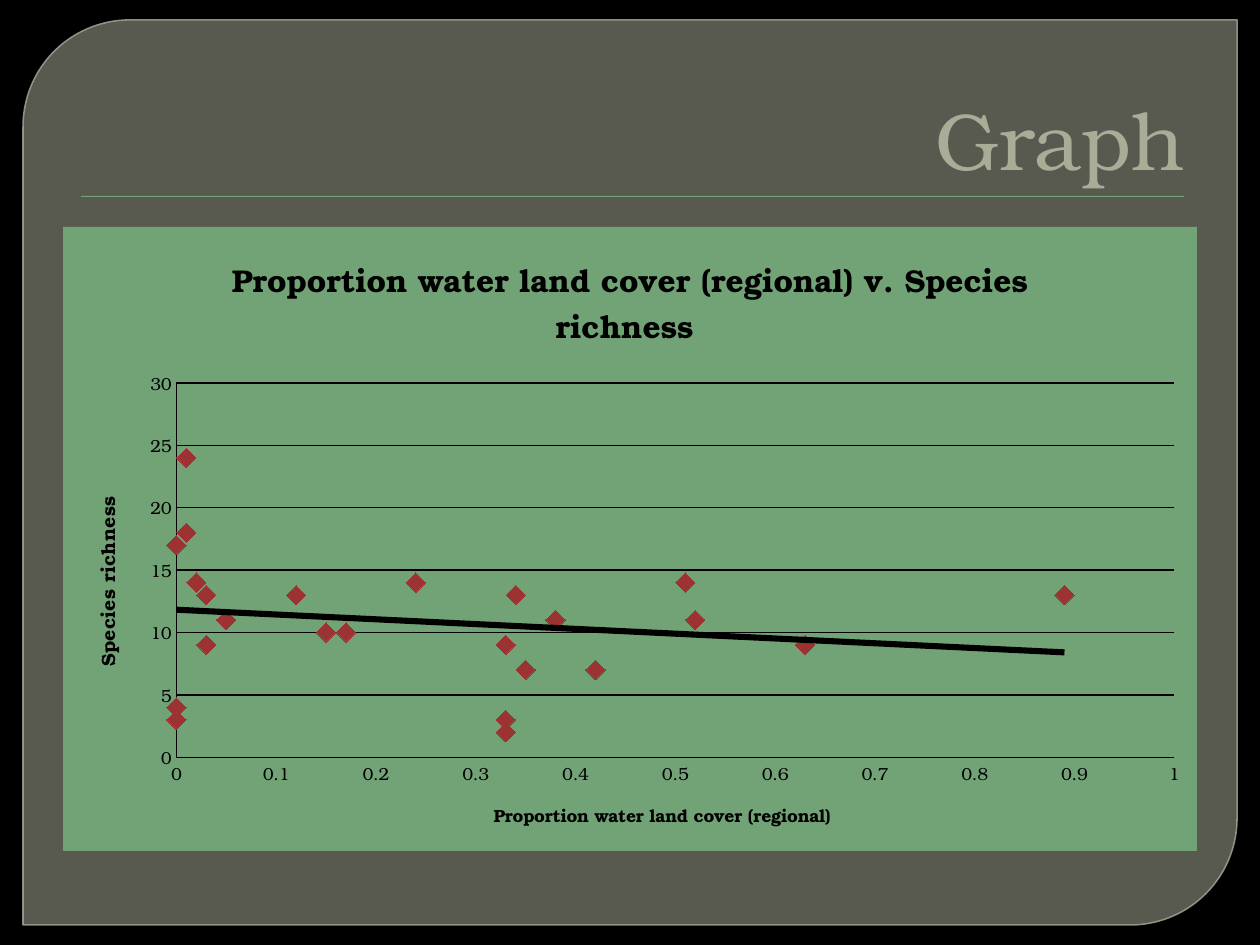
from dataclasses import dataclass

from lxml import etree
from pptx import Presentation
from pptx.chart.data import XyChartData
from pptx.dml.color import RGBColor
from pptx.enum.chart import XL_CHART_TYPE, XL_MARKER_STYLE, XL_TICK_MARK
from pptx.enum.shapes import MSO_SHAPE
from pptx.enum.text import MSO_ANCHOR, PP_ALIGN
from pptx.oxml import parse_xml
from pptx.oxml.ns import nsdecls, qn
from pptx.util import Pt

SCATTER = XL_CHART_TYPE.XY_SCATTER
DIAMOND = XL_MARKER_STYLE.DIAMOND
NO_TICKS = XL_TICK_MARK.NONE
PANEL = MSO_SHAPE.ROUND_2_DIAG_RECTANGLE
RECTANGLE = MSO_SHAPE.RECTANGLE
RIGHT = PP_ALIGN.RIGHT
BOTTOM = MSO_ANCHOR.BOTTOM

EMU_PER_PX = 914400 / 126

# (proportion of water land cover, species richness)
SITES = [
    (0, 3), (0.12, 13), (0.52, 11), (0.38, 11), (0.02, 14),
    (0.05, 11), (0.34, 13), (0.89, 13), (0.24, 14), (0.42, 7),
    (0.63, 9), (0.01, 18), (0.01, 24), (0.35, 7), (0.03, 13),
    (0.15, 10), (0, 17), (0.33, 2), (0.33, 3), (0.02, 14),
    (0.33, 9), (0.51, 14), (0.03, 9), (0.17, 10), (0, 4),
]


@dataclass(frozen=True)
class Theme:
    font: str = "TeX Gyre Bonum"
    background: str = "000000"
    panel: str = "888B7B"
    panel_line: str = "9DA090"
    green: str = "72A376"
    cream: str = "E7EACB"
    ink: str = "000000"
    marker: str = "9D3232"
    title_size: int = 46
    chart_title_size: int = 18
    value_title_size: int = 11
    chart_size: int = 10


def px(length):
    return round(length * EMU_PER_PX)


def rgb(color):
    return RGBColor.from_string(color)


def write(frame, text, *, font, size, color, bold=False, align=None):
    """Fill a text frame with one formatted paragraph."""
    para = frame.paragraphs[0]
    if align is not None:
        para.alignment = align
    span = para.add_run()
    span.text = text
    span.font.name = font
    span.font.size = Pt(size)
    span.font.bold = bold
    span.font.color.rgb = rgb(color)


def set_alpha(fill_parent, percent):
    """Make the solid fill found under an element partly transparent."""
    color = fill_parent.find(qn("a:solidFill")).find(qn("a:srgbClr"))
    etree.SubElement(color, qn("a:alpha")).set("val", str(percent * 1000))


class SlideBuilder:
    def __init__(self, page, theme):
        self.page = page
        self.theme = theme
        page.background.fill.solid()
        page.background.fill.fore_color.rgb = rgb(theme.background)

    def shape(self, kind, left, top, width, height, color):
        box = self.page.shapes.add_shape(kind, px(left), px(top), px(width), px(height))
        box.shadow.inherit = False
        box.fill.solid()
        box.fill.fore_color.rgb = rgb(color)
        box.line.fill.background()
        return box

    def panel(self, left, top, width, height):
        box = self.shape(PANEL, left, top, width, height, self.theme.panel)
        box.adjustments[0] = 0.118
        box.adjustments[1] = 0
        box.line.color.rgb = rgb(self.theme.panel_line)
        box.line.width = Pt(0.87)
        properties = box._element.spPr
        set_alpha(properties, 65)
        set_alpha(properties.find(qn("a:ln")), 88)

    def rule(self, left, top, width):
        box = self.shape(RECTANGLE, left, top, width, 1, self.theme.green)
        effects = box._element.spPr.find(qn("a:effectLst"))
        effects.append(parse_xml(
            f'<a:outerShdw {nsdecls("a")} blurRad="12700" dist="12700" dir="5400000">'
            '<a:srgbClr val="000000"><a:alpha val="75000"/></a:srgbClr></a:outerShdw>'))

    def title(self, text, left, top, width, height):
        box = self.page.shapes.title
        box.left, box.top, box.width, box.height = map(px, (left, top, width, height))
        box.text_frame.vertical_anchor = BOTTOM
        write(box.text_frame, text, font=self.theme.font, size=self.theme.title_size,
              color=self.theme.cream, align=RIGHT)

    def axis(self, axis, title, size, maximum, step, gridlines):
        theme = self.theme
        axis.minimum_scale, axis.maximum_scale, axis.major_unit = 0, maximum, step
        axis.major_tick_mark = axis.minor_tick_mark = NO_TICKS
        axis.has_major_gridlines = gridlines
        lines = [axis.format.line]
        if gridlines:
            lines.append(axis.major_gridlines.format.line)
        for line in lines:
            line.color.rgb = rgb(theme.ink)
            line.width = Pt(0.75)
        axis.tick_labels.font.size = Pt(theme.chart_size)
        axis.tick_labels.font.color.rgb = rgb(theme.ink)
        axis.tick_labels.number_format = "General"
        axis.tick_labels.number_format_is_linked = False
        write(axis.axis_title.text_frame, title, font=theme.font, size=size,
              color=theme.ink, bold=True)

    def trend_line(self, series):
        series._element.find(qn("c:xVal")).addprevious(parse_xml(
            f'<c:trendline {nsdecls("c", "a")}><c:spPr><a:ln w="{Pt(3.5)}"><a:solidFill>'
            f'<a:srgbClr val="{self.theme.ink}"/></a:solidFill></a:ln></c:spPr>'
            '<c:trendlineType val="linear"/><c:dispRSqr val="0"/><c:dispEq val="0"/>'
            '</c:trendline>'))

    def frame_chart(self, chart, x, y, w, h):
        """Fill the chart area and place the plot by fractions of it."""
        root = chart._chartSpace.find(qn("c:chart"))
        root.addnext(parse_xml(
            f'<c:spPr {nsdecls("c", "a")}><a:solidFill><a:srgbClr val="{self.theme.green}"/>'
            '</a:solidFill><a:ln><a:noFill/></a:ln></c:spPr>'))
        plot_area = root.find(qn("c:plotArea"))
        for layout in plot_area.findall(qn("c:layout")):
            plot_area.remove(layout)
        sizes = "".join(f'<c:{name} val="{value}"/>'
                        for name, value in zip("xywh", (x, y, w, h)))
        plot_area.insert(0, parse_xml(
            f'<c:layout {nsdecls("c")}><c:manualLayout><c:layoutTarget val="inner"/>'
            f'<c:xMode val="edge"/><c:yMode val="edge"/>{sizes}</c:manualLayout></c:layout>'))

    def scatter(self, title, x_title, y_title, points, left, top, width, height):
        theme = self.theme
        data = XyChartData()
        series_data = data.add_series("Series 1")
        for x, y in points:
            series_data.add_data_point(x, y)
        chart = self.page.shapes.add_chart(
            SCATTER, px(left), px(top), px(width), px(height), data).chart
        chart.has_legend = False
        chart.font.name = theme.font
        chart.font.size = Pt(theme.chart_size)
        chart.font.color.rgb = rgb(theme.ink)
        write(chart.chart_title.text_frame, title, font=theme.font,
              size=theme.chart_title_size, color=theme.ink, bold=True)
        chart.plots[0].vary_by_categories = False

        series = chart.plots[0].series[0]
        series.format.line.fill.background()
        series.marker.style = DIAMOND
        series.marker.size = 11
        series.marker.format.fill.solid()
        series.marker.format.fill.fore_color.rgb = rgb(theme.marker)
        series.marker.format.line.color.rgb = rgb(theme.marker)
        self.trend_line(series)

        self.axis(chart.category_axis, x_title, theme.chart_size, 1, 0.1, False)
        self.axis(chart.value_axis, y_title, theme.value_title_size, 30, 5, True)
        self.frame_chart(chart, 0.1, 0.25, 0.88, 0.6)


def main():
    deck = Presentation()
    deck.slide_width, deck.slide_height = px(1260), px(945)
    slide = SlideBuilder(deck.slides.add_slide(deck.slide_layouts[5]), Theme())
    slide.panel(23, 20, 1214, 905)
    slide.rule(81, 196, 1103)
    slide.title("Graph", 63, 35, 1134, 158)
    slide.scatter("Proportion water land cover (regional) v. Species richness ",
                  "Proportion water land cover (regional) ", "Species richness ",
                  SITES, 63, 227, 1134, 624)
    deck.save("out.pptx")


if __name__ == "__main__":
    main()
